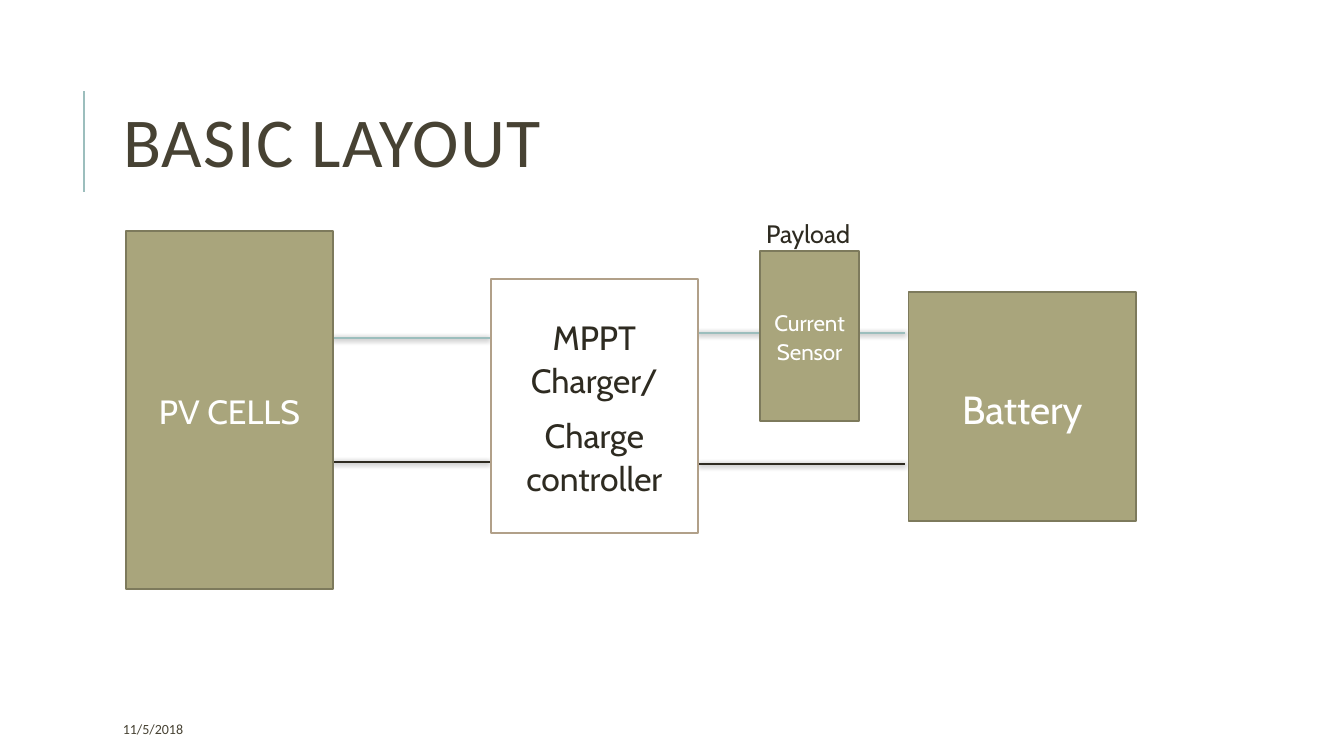
from dataclasses import dataclass

from lxml import etree
from pptx import Presentation
from pptx.dml.color import RGBColor
from pptx.enum.shapes import MSO_CONNECTOR, MSO_SHAPE
from pptx.enum.text import MSO_ANCHOR, MSO_AUTO_SIZE, PP_ALIGN
from pptx.oxml.ns import qn
from pptx.util import Emu, Pt

RECT = MSO_SHAPE.RECTANGLE
LINE = MSO_CONNECTOR.STRAIGHT
LEFT, MID = PP_ALIGN.LEFT, PP_ALIGN.CENTER
TOP, CENTER = MSO_ANCHOR.TOP, MSO_ANCHOR.MIDDLE
FIXED = MSO_AUTO_SIZE.NONE
SCALE = 9144  # one px is a hundredth of an inch


@dataclass(frozen=True)
class Theme:
    head: str = "Calibri"
    body: str = "Cabin"
    brown: str = "474233"
    dark: str = "2E2B21"
    teal: str = "9CBEBD"
    olive: str = "A9A57C"
    edge: str = "7D7A5C"
    tan: str = "B1A089"
    white: str = "FFFFFF"
    black: str = "000000"
    title: int = 50
    large: int = 28
    block: int = 24
    label: int = 18
    small: int = 16
    date: int = 10


def px(num):
    return Emu(num * SCALE)


def rgb(code):
    return RGBColor.from_string(code)


class Board:
    def __init__(self, deck, theme):
        self.theme = theme
        self.slide = deck.slides.add_slide(deck.slide_layouts[5])
        self.shapes = self.slide.shapes

    def fill_text(self, frame, lines, size, color, font, align=LEFT, anchor=CENTER):
        frame.word_wrap = True
        frame.auto_size = FIXED
        frame.vertical_anchor = anchor
        for i, line in enumerate(lines):
            para = frame.add_paragraph() if i else frame.paragraphs[0]
            para.alignment = align
            run = para.add_run()
            run.text = line
            run.font.size = Pt(size)
            run.font.name = font
            run.font.color.rgb = rgb(color)

    def title(self, text, x, y, w, h):
        shape = self.shapes.title
        shape.left, shape.top, shape.width, shape.height = map(px, (x, y, w, h))
        t = self.theme
        self.fill_text(shape.text_frame, [text], t.title, t.brown, t.head)
        para = shape.text_frame.paragraphs[0]
        para.line_spacing = 0.8
        para.runs[0].font._element.set("spc", "100")

    def text(self, text, x, y, w, h, size, color, font, anchor=CENTER):
        box = self.shapes.add_textbox(*map(px, (x, y, w, h)))
        self.fill_text(box.text_frame, [text], size, color, font, anchor=anchor)

    def block(self, lines, x, y, w, h, size, fill, edge, color):
        shape = self.shapes.add_shape(RECT, *map(px, (x, y, w, h)))
        shape.shadow.inherit = False
        shape.fill.solid()
        shape.fill.fore_color.rgb = rgb(fill)
        shape.line.color.rgb = rgb(edge)
        shape.line.width = Pt(1.25)
        self.fill_text(shape.text_frame, lines, size, color, self.theme.body, MID)
        for para in shape.text_frame.paragraphs:
            para.line_spacing = 1.07
            para.space_after = Pt(8)

    def line(self, x1, y1, x2, y2, color, shade=False):
        wire = self.shapes.add_connector(LINE, *map(px, (x1, y1, x2, y2)))
        wire.line.color.rgb = rgb(color)
        wire.line.width = Pt(1.5)
        fx = etree.SubElement(wire._element.spPr, qn("a:effectLst"))
        if shade:
            drop = etree.SubElement(
                fx, qn("a:outerShdw"), blurRad=str(Pt(4)), dist=str(Pt(1)),
                dir="5400000", rotWithShape="0")
            tint = etree.SubElement(drop, qn("a:srgbClr"), val=self.theme.black)
            etree.SubElement(tint, qn("a:alpha"), val="50000")


def main():
    deck = Presentation()
    deck.slide_width, deck.slide_height = px(1333), px(750)
    t = Theme()
    board = Board(deck, t)

    # Title, accent rule and date
    board.line(83, 190, 83, 90, t.teal)
    board.title("BASIC LAYOUT", 112, 64, 1063, 164)
    board.text("11/5/2018", 112, 708, 236, 30, t.date, t.brown, t.head)

    # Wires between the blocks
    for x1, x2, y, color in (
        (329, 486, 335, t.teal),
        (329, 486, 458, t.dark),
        (691, 898, 330, t.teal),
        (692, 898, 460, t.dark),
    ):
        board.line(x1, y, x2, y, color, shade=True)

    # Circuit blocks
    solid = (t.olive, t.edge, t.white)
    plain = (t.white, t.tan, t.dark)
    for lines, spot, size, look in (
        (["PV CELLS"], (125, 229, 205, 355), t.block, solid),
        (["MPPT Charger/", "Charge controller"], (487, 277, 205, 252), t.block, plain),
        (["Battery"], (901, 290, 226, 227), t.large, solid),
        (["Current Sensor"], (754, 249, 98, 169), t.small, solid),
    ):
        board.block(lines, *spot, size, *look)

    # Label above the sensor
    board.text("Payload", 750, 212, 106, 40, t.label, t.dark, t.body, TOP)

    deck.save("out.pptx")


if __name__ == "__main__":
    main()
